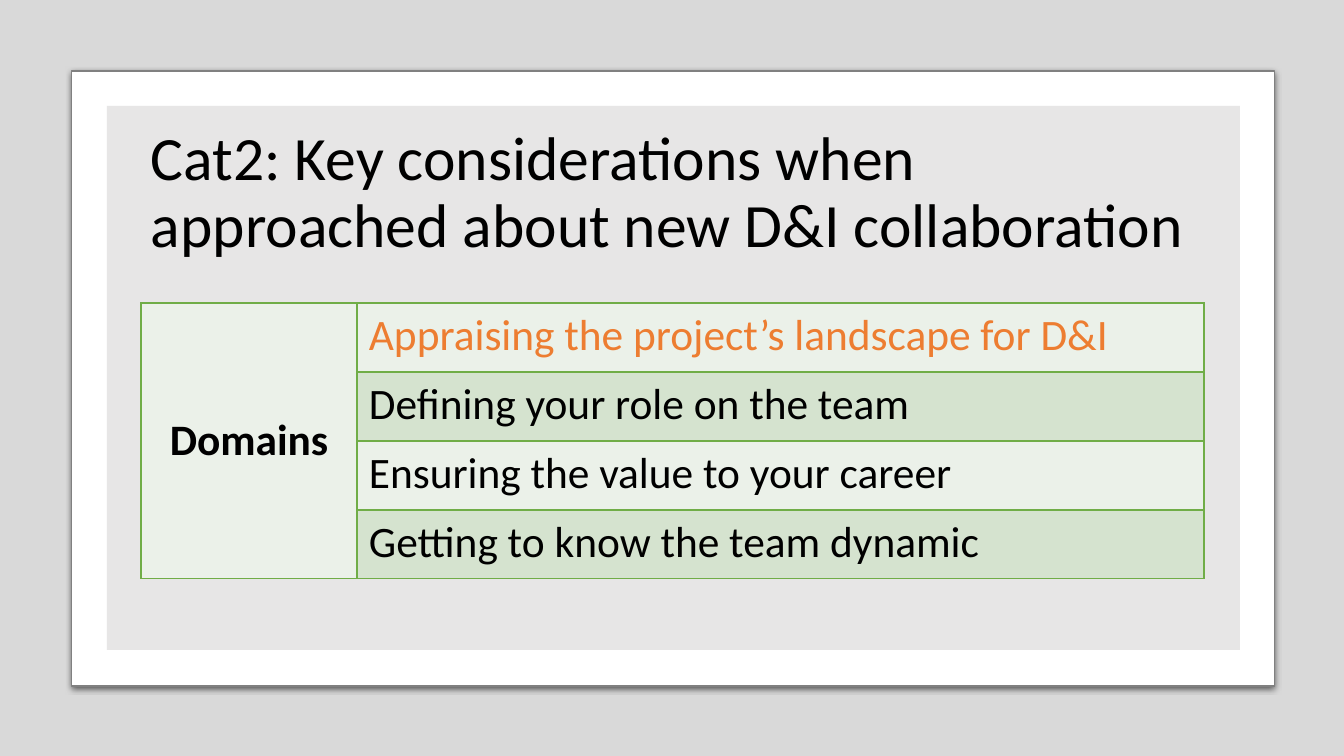
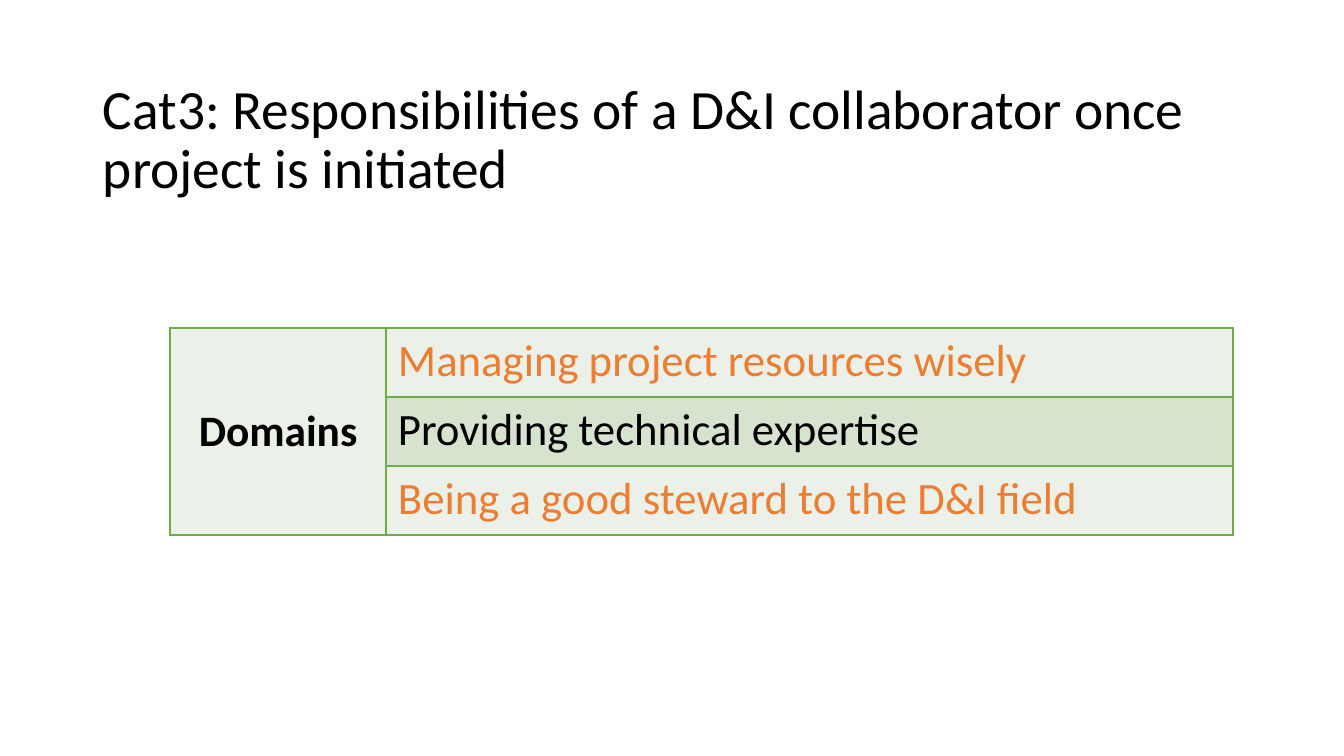
"""Build two slides listing the domains of D&I collaboration categories."""
from dataclasses import dataclass

from lxml.etree import SubElement
from pptx import Presentation
from pptx.dml.color import RGBColor
from pptx.enum.shapes import MSO_SHAPE as SHAPE
from pptx.enum.text import MSO_ANCHOR as ANCHOR, PP_ALIGN as ALIGN
from pptx.oxml.ns import qn
from pptx.util import Pt

SCALE = 12192000 / 1344
SLIDE_W, SLIDE_H = 1344, 756
FONT = "Calibri"
BLACK, WHITE, ORANGE = "000000", "FFFFFF", "ED7D31"
GREY, PANEL, GREEN = "808080", "E7E6E6", "70AD47"
BANDS = ("EBF1E9", "D5E3CF")
LABEL_W, DOMAIN_W, ROW_H = 216, 847, 69
PAD_X, PAD_Y = 12, 6
LABEL_SIZE = 31


@dataclass(frozen=True)
class Box:
    x: int
    y: int
    w: int
    h: int


@dataclass(frozen=True)
class Domain:
    text: str
    color: str = BLACK


@dataclass(frozen=True)
class Category:
    title: str
    title_box: Box
    title_size: float
    table_x: int
    table_y: int
    domain_size: int
    domains: tuple[Domain, ...]
    framed: bool = False


CATEGORIES = (
    Category(
        "Cat2: Key considerations when approached about new D&I collaboration",
        Box(141, 119, 1062, 150), 44, 141, 303, 31,
        (
            Domain("Appraising the project’s landscape for D&I", ORANGE),
            Domain("Defining your role on the team"),
            Domain("Ensuring the value to your career"),
            Domain("Getting to know the team dynamic"),
        ),
        framed=True,
    ),
    Category(
        "Cat3: Responsibilities of a D&I collaborator once project is initiated",
        Box(93, 68, 1159, 146), 39.6, 170, 328, 32,
        (
            Domain("Managing project resources wisely", ORANGE),
            Domain("Providing technical expertise"),
            Domain("Being a good steward to the D&I field", ORANGE),
        ),
    ),
)


def px(n: int) -> int:
    return round(n * SCALE)


def place(box: Box) -> tuple[int, ...]:
    return tuple(px(n) for n in (box.x, box.y, box.w, box.h))


def rgb(color: str) -> RGBColor:
    return RGBColor.from_string(color)


def add_run(p, text: str, size: float, color: str = BLACK, bold: bool = False) -> None:
    r = p.add_run()
    r.text = text
    r.font.name = FONT
    r.font.size = Pt(size)
    r.font.bold = bold
    r.font.color.rgb = rgb(color)


def add_panel(s, box: Box, color: str, kind=SHAPE.RECTANGLE):
    sp = s.shapes.add_shape(kind, *place(box))
    sp.shadow.inherit = False
    sp.fill.solid()
    sp.fill.fore_color.rgb = rgb(color)
    sp.line.fill.background()
    return sp


def set_alpha(parent, percent: int) -> None:
    clr = next(parent.iter(qn("a:srgbClr")))
    SubElement(clr, qn("a:alpha"), val=str(percent * 1000))


def add_shadow(sp) -> None:
    effects = sp._element.spPr.find(qn("a:effectLst"))
    shadow = SubElement(effects, qn("a:outerShdw"), blurRad=str(Pt(4.5)),
                        dist=str(Pt(1.5)), dir="5400000", rotWithShape="0")
    SubElement(shadow, qn("a:srgbClr"), val=BLACK)
    set_alpha(shadow, 63)


def add_frame(s) -> None:
    shade = add_panel(s, Box(0, 0, SLIDE_W, SLIDE_H), BLACK)
    set_alpha(shade._element.spPr, 15)
    card = add_panel(s, Box(72, 71, 1203, 615), WHITE, SHAPE.ROUNDED_RECTANGLE)
    card.adjustments[0] = 0
    card.line.color.rgb = rgb(GREY)
    card.line.width = Pt(0.75)
    add_shadow(card)
    add_panel(s, Box(107, 106, 1133, 544), PANEL)


def add_title(s, category: Category) -> None:
    tf = s.shapes.add_textbox(*place(category.title_box)).text_frame
    tf.word_wrap = True
    tf.vertical_anchor = ANCHOR.MIDDLE
    p = tf.paragraphs[0]
    p.line_spacing = 0.9
    add_run(p, category.title, category.title_size)


def style_cell(cell, fill: str) -> None:
    tc_pr = cell._tc.get_or_add_tcPr()
    for side in ("lnL", "lnR", "lnT", "lnB"):
        ln = SubElement(tc_pr, qn(f"a:{side}"), w=str(Pt(1)))
        SubElement(SubElement(ln, qn("a:solidFill")), qn("a:srgbClr"), val=GREEN)
    cell.fill.solid()
    cell.fill.fore_color.rgb = rgb(fill)
    cell.margin_left = cell.margin_right = px(PAD_X)
    cell.margin_top = cell.margin_bottom = px(PAD_Y)


def add_domains(s, category: Category) -> None:
    count = len(category.domains)
    box = Box(category.table_x, category.table_y, LABEL_W + DOMAIN_W, ROW_H * count)
    table = s.shapes.add_table(count, 2, *place(box)).table
    table.first_row = table.horz_banding = False
    for column, width in zip(table.columns, (LABEL_W, DOMAIN_W)):
        column.width = px(width)
    for i, domain in enumerate(category.domains):
        table.rows[i].height = px(ROW_H)
        style_cell(table.cell(i, 0), BANDS[0])
        cell = table.cell(i, 1)
        style_cell(cell, BANDS[i % 2])
        add_run(cell.text_frame.paragraphs[0], domain.text, category.domain_size, domain.color)
    label = table.cell(0, 0)
    label.merge(table.cell(count - 1, 0))
    label.vertical_anchor = ANCHOR.MIDDLE
    p = label.text_frame.paragraphs[0]
    p.alignment = ALIGN.CENTER
    add_run(p, "Domains", LABEL_SIZE, bold=True)


def main() -> None:
    prs = Presentation()
    prs.slide_width, prs.slide_height = px(SLIDE_W), px(SLIDE_H)
    for category in CATEGORIES:
        s = prs.slides.add_slide(prs.slide_layouts[6])
        if category.framed:
            add_frame(s)
        add_title(s, category)
        add_domains(s, category)
    prs.save("out.pptx")


if __name__ == "__main__":
    main()
